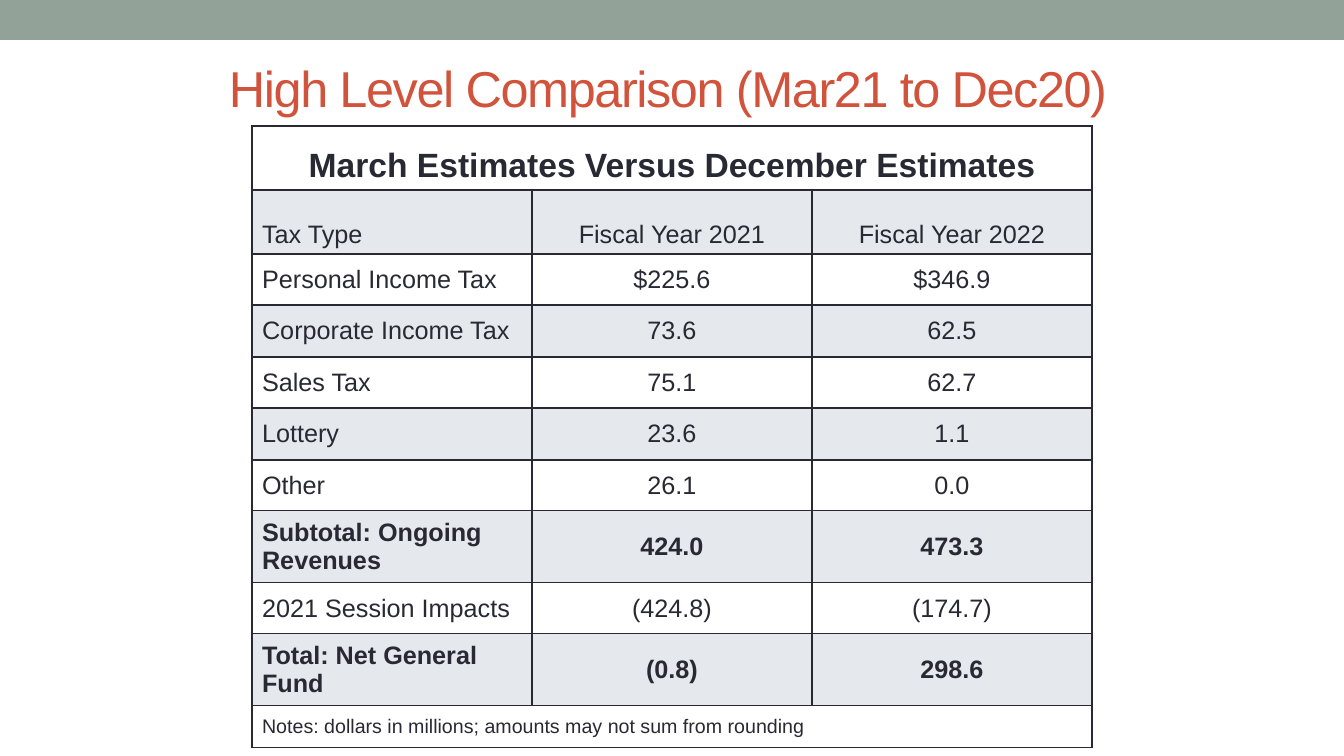
import pptx
import pptx.util
import pptx.dml.color
import pptx.enum.shapes
import pptx.enum.text
import pptx.oxml.ns
import lxml.etree
from dataclasses import dataclass


@dataclass(frozen=True)
class Theme:
    font: str = "Arial"
    banner: str = "93A299"
    title: str = "D2533C"
    ink: str = "292934"
    band: str = "808DA0"
    band_opacity: int = 20
    title_pt: int = 36
    heading_pt: int = 24
    body_pt: int = 18
    caption_pt: int = 14
    border_pt: int = 1


THEME = Theme()
ALIGN = pptx.enum.text.PP_ALIGN
ANCHOR = pptx.enum.text.MSO_ANCHOR

HEADING = "March Estimates Versus December Estimates"
COLUMNS = ("Tax Type", "Fiscal Year 2021", "Fiscal Year 2022")
ESTIMATES = (
    ("Personal Income Tax", "$225.6", "$346.9"),
    ("Corporate Income Tax", "73.6", "62.5"),
    ("Sales Tax", "75.1", "62.7"),
    ("Lottery", "23.6", "1.1"),
    ("Other", "26.1", "0.0"),
    ("Subtotal: Ongoing Revenues", "424.0", "473.3"),
    ("2021 Session Impacts", "(424.8)", "(174.7)"),
    ("Total: Net General Fund", "(0.8)", "298.6"),
)
CAPTION = "Notes: dollars in millions; amounts may not sum from rounding"
# Row boundaries in px below the top of the table
ROW_EDGES = (0, 64, 128, 179, 231, 282, 334, 385, 457, 508, 580, 622)


def px(length):
    return pptx.util.Emu(round(length * 914400 / 100.8))


def rgb(colour):
    return pptx.dml.color.RGBColor.from_string(colour)


def write(frame, text, size, colour, bold=False, align=ALIGN.LEFT):
    paragraph = frame.paragraphs[0]
    paragraph.text = text
    paragraph.alignment = align
    run = paragraph.runs[0]
    run.font.name = THEME.font
    run.font.size = pptx.util.Pt(size)
    run.font.bold = bold
    run.font.color.rgb = rgb(colour)
    return run


def add_banner(slide, box):
    banner = slide.shapes.add_shape(
        pptx.enum.shapes.MSO_SHAPE.RECTANGLE, *map(px, box))
    banner.shadow.inherit = False
    banner.fill.solid()
    banner.fill.fore_color.rgb = rgb(THEME.banner)
    banner.line.fill.background()


def add_title(slide, box):
    title = slide.shapes.add_textbox(*map(px, box))
    title.text_frame.word_wrap = True
    title.text_frame.vertical_anchor = ANCHOR.MIDDLE
    run = write(title.text_frame, "High Level Comparison (Mar21 to Dec20)",
                THEME.title_pt, THEME.title)
    run._r.get_or_add_rPr().set("spc", "-100")  # tighter letter spacing


def outline(cell):
    properties = cell._tc.get_or_add_tcPr()
    qn = pptx.oxml.ns.qn
    for side in ("a:lnL", "a:lnR", "a:lnT", "a:lnB"):
        border = lxml.etree.SubElement(
            properties, qn(side), w=str(pptx.util.Pt(THEME.border_pt)))
        solid = lxml.etree.SubElement(border, qn("a:solidFill"))
        lxml.etree.SubElement(solid, qn("a:srgbClr"), val=THEME.ink)


def shade(cell, banded):
    if not banded:
        cell.fill.background()
        return
    cell.fill.solid()
    cell.fill.fore_color.rgb = rgb(THEME.band)
    band_colour = cell._tc.tcPr.find(pptx.oxml.ns.qn("a:solidFill"))[0]
    lxml.etree.SubElement(band_colour, pptx.oxml.ns.qn("a:alpha"),
                          val=str(THEME.band_opacity * 1000))


def add_estimates(slide, box):
    rows = ((HEADING,), COLUMNS, *ESTIMATES, (CAPTION,))
    estimates = slide.shapes.add_table(
        len(rows), len(COLUMNS), *map(px, box)).table
    estimates.first_row = False
    estimates.horz_banding = False
    for column in estimates.columns:
        column.width = px(box[2] / len(COLUMNS))

    for r, texts in enumerate(rows):
        estimates.rows[r].height = px(ROW_EDGES[r + 1] - ROW_EDGES[r])
        is_heading, is_caption = r == 0, r == len(rows) - 1
        size = (THEME.heading_pt if is_heading else
                THEME.caption_pt if is_caption else THEME.body_pt)
        bold = is_heading or texts[0].startswith(("Subtotal", "Total"))

        for c in range(len(COLUMNS)):
            cell = estimates.cell(r, c)
            outline(cell)
            shade(cell, r % 2 == 1)
            cell.vertical_anchor = ANCHOR.BOTTOM if r < 2 else ANCHOR.MIDDLE
            if c < len(texts):
                centred = is_heading or c > 0
                write(cell.text_frame, texts[c], size, THEME.ink, bold,
                      ALIGN.CENTER if centred else ALIGN.LEFT)

        # Heading and caption run across the whole table
        if len(texts) == 1:
            estimates.cell(r, 0).merge(estimates.cell(r, len(COLUMNS) - 1))


def main():
    deck = pptx.Presentation()
    deck.slide_width, deck.slide_height = px(1344), px(756)
    slide = deck.slides.add_slide(deck.slide_layouts[6])
    add_banner(slide, (0, 0, 1344, 40))
    add_title(slide, (219, 58, 907, 58))
    add_estimates(slide, (252, 126, 840, ROW_EDGES[-1]))
    deck.save("out.pptx")


if __name__ == "__main__":
    main()
